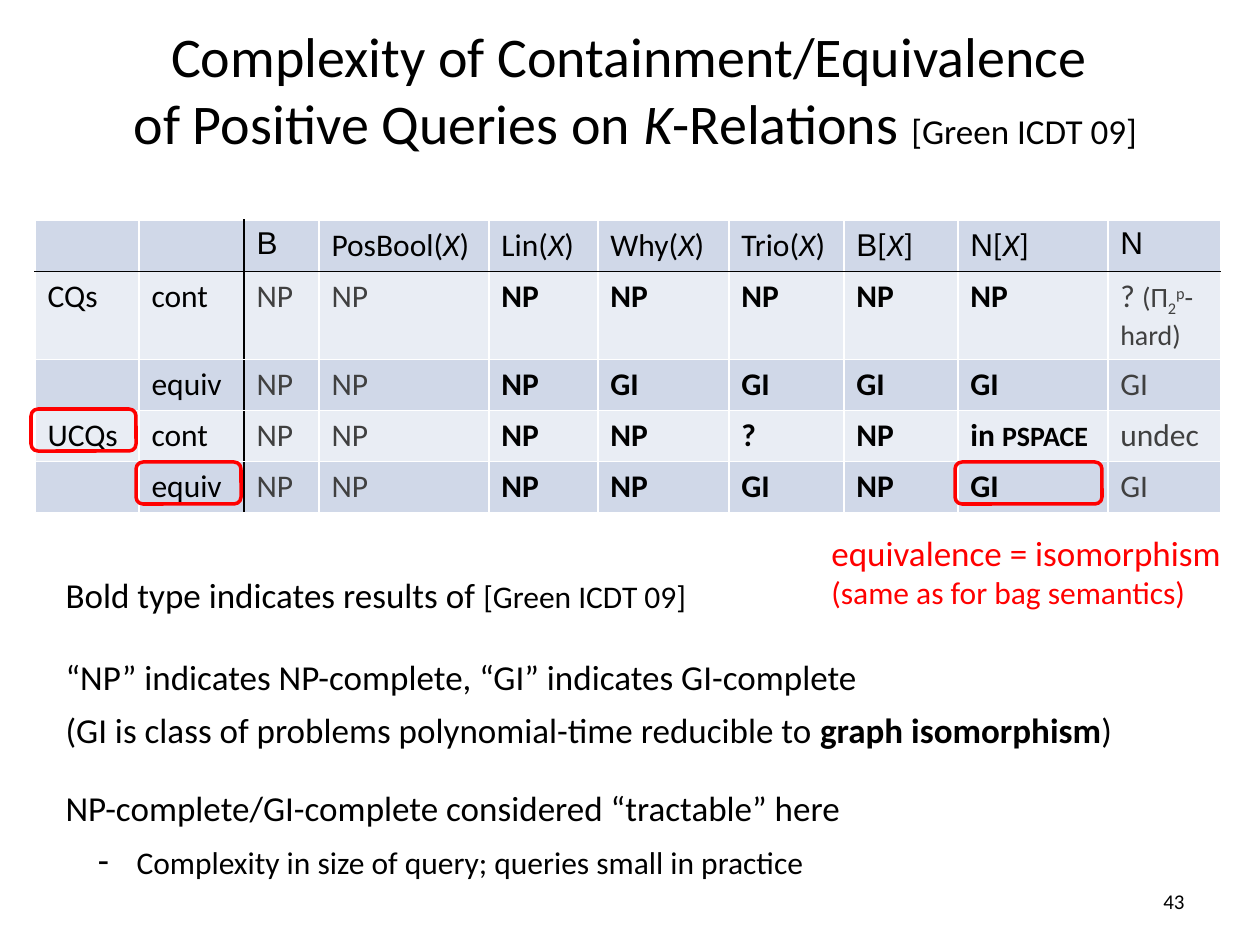
"""Builds the slide on the complexity of containment and equivalence."""
from lxml.etree import SubElement as Sub
from pptx import Presentation
from pptx.dml.color import RGBColor as Rgb
from pptx.enum.shapes import MSO_SHAPE as Shape
from pptx.enum.text import MSO_ANCHOR as Anchor, MSO_AUTO_SIZE as Fit, PP_ALIGN as Align
from pptx.oxml.ns import qn
from pptx.util import Emu, Pt

BLACK, WHITE, RED = Rgb(0, 0, 0), Rgb(255, 255, 255), Rgb(255, 0, 0)
GREY, DARK, LIGHT = Rgb(0x40, 0x40, 0x40), Rgb(0xD0, 0xD8, 0xE8), Rgb(0xE9, 0xED, 0xF4)

ITAL, BOLD, ARIAL = {"italic": True}, {"bold": True}, {"name": "Arial"}
S16, S18, S20 = ({"size": Pt(n)} for n in (16, 18, 20))
SUBS, SUPS = {**S16, "base": -25000}, {**S16, "base": 30000}
CITE = "[Green ICDT 09]"

TITLE = [
    [("Complexity of Containment/Equivalence ", {})],
    [("of Positive Queries on ", {}), ("K", ITAL), ("-Relations ", {}), (CITE, S20)],
]


def func(name):
    return [(name + "(", {}), ("X", ITAL), (")", {})]


def poly(name):
    return [(name, ARIAL), ("[", {}), ("X", ITAL), ("]", {})]


HARD = [("? ", {}), ("(Π", S16), ("2", SUBS), ("p", SUPS), ("- hard)", S16)]
SPACE = [("in ", {}), ("PSPACE", S16)]
ROWS = [
    ["", "", [("B", ARIAL)], func("PosBool"), func("Lin"), func("Why"), func("Trio"),
     poly("B"), poly("N"), [("N", ARIAL)]],
    ["CQs", "cont", "NP", "NP", "NP", "NP", "NP", "NP", "NP", HARD],
    ["", "equiv", "NP", "NP", "NP", "GI", "GI", "GI", "GI", "GI"],
    ["UCQs", "cont", "NP", "NP", "NP", "NP", "?", "NP", SPACE, "undec"],
    ["", "equiv", "NP", "NP", "NP", "NP", "GI", "NP", "GI", "GI"],
]
WIDTHS = [104, 105, 75, 170, 109, 131, 115, 114, 150, 113]
ROW_H = 51
GREY_COLS, BOLD_COLS = (2, 3, 9), range(4, 9)

NOTES = [
    (0, [("Bold type indicates results of ", {}), (CITE, S18)]),
    (17, [("“NP” indicates NP-complete, “GI” indicates GI-complete", {})]),
    (0, [("(GI is class of problems polynomial-time reducible to ", {}),
         ("graph isomorphism", BOLD), (")", {})]),
    (15, [("NP-complete/GI-complete considered “tractable” here", {})]),
    (0, [(" ", {}), ("Complexity in size of query; queries small in practice", S18)]),
]
CLAIM = [[("equivalence = isomorphism", {})], [("(same as for bag semantics)", S18)]]
RINGS = [(955, 462, 147), (136, 462, 105), (31, 409, 105)]
RING_H = 42


def px(n):
    return Emu(round(n * 914400 / 126))


def place(shape, *box):
    for key, n in zip(("left", "top", "width", "height"), box):
        setattr(shape, key, px(n))


def write(para, runs, size, color=BLACK, **base):
    for text, own in runs:
        run = para.add_run()
        run.text = text
        form = {"name": "Calibri", "size": Pt(size), **base, **own}
        shift = form.pop("base", None)
        for key, val in form.items():
            setattr(run.font, key, val)
        run.font.color.rgb = color
        if shift:
            run._r.get_or_add_rPr().set("baseline", str(shift))


def edge(cell, side, color, width):
    line = Sub(cell._tc.get_or_add_tcPr(), qn("a:ln" + side), w=str(Pt(width)))
    Sub(Sub(line, qn("a:solidFill")), qn("a:srgbClr"), val=str(color))


def bullet(para, left, hang, mark=None):
    props = para._p.get_or_add_pPr()
    props.set("marL", str(px(left)))
    props.set("indent", str(px(hang)))
    if mark:
        Sub(props, qn("a:buChar"), char=mark)
    else:
        Sub(props, qn("a:buNone"))


def add_box(slide, *box):
    shape = slide.shapes.add_textbox(*map(px, box))
    shape.text_frame.word_wrap = True
    return shape.text_frame


def add_title(slide):
    shape = slide.shapes.title
    place(shape, 42, 10, 1187, 158)
    frame = shape.text_frame
    frame.auto_size, frame.vertical_anchor = Fit.NONE, Anchor.MIDDLE
    para = frame.paragraphs[0]
    para.alignment = Align.CENTER
    for i, runs in enumerate(TITLE):
        if i:
            para.add_line_break()
        write(para, runs, 32)


def add_grid(slide):
    box = map(px, (35, 220, sum(WIDTHS), ROW_H * len(ROWS)))
    table = slide.shapes.add_table(len(ROWS), len(WIDTHS), *box).table
    table.first_row = table.horz_banding = False
    for col, n in zip(table.columns, WIDTHS):
        col.width = px(n)
    for r, row in enumerate(ROWS):
        table.rows[r].height = px(ROW_H)
        for c, item in enumerate(row):
            cell = table.cell(r, c)
            rules = {"L": c == 2, "R": c == 1, "T": r == 1, "B": r == 0}
            for side, on in rules.items():
                edge(cell, side, *((BLACK, 0.75) if on else (WHITE, 1)))
            cell.fill.solid()
            cell.fill.fore_color.rgb = LIGHT if r % 2 else DARK
            runs = [(item, {})] if isinstance(item, str) else item
            if item:
                color = GREY if r and c in GREY_COLS else BLACK
                write(cell.text_frame.paragraphs[0], runs, 18, color,
                      bold=bool(r and c in BOLD_COLS))


def add_notes(slide):
    shape = slide.placeholders[1]
    place(shape, 53, 567, 1207, 323)
    frame = shape.text_frame
    frame.auto_size, frame.vertical_anchor = Fit.NONE, Anchor.TOP
    for i, (gap, runs) in enumerate(NOTES):
        para = frame.add_paragraph() if i else frame.paragraphs[0]
        para.space_before, para.space_after = Pt(gap), Pt(6)
        if i == len(NOTES) - 1:
            para.level = 1
            bullet(para, 63, -31, "-")
        else:
            bullet(para, 0, 0)
        write(para, runs, 20)


def add_marks(slide):
    for left, top, width in RINGS:
        ring = slide.shapes.add_shape(
            Shape.ROUNDED_RECTANGLE, *map(px, (left, top, width, RING_H)))
        ring.shadow.inherit = False
        ring.fill.background()
        ring.line.color.rgb, ring.line.width = RED, Pt(2)
    frame = add_box(slide, 819, 525, 420, 93)
    for i, runs in enumerate(CLAIM):
        para = frame.add_paragraph() if i else frame.paragraphs[0]
        write(para, runs, 20, RED)


def add_number(slide):
    frame = add_box(slide, 903, 876, 294, 50)
    frame.vertical_anchor = Anchor.MIDDLE
    para = frame.paragraphs[0]
    para.alignment = Align.RIGHT
    write(para, [("43", {})], 12)


def main():
    deck = Presentation()
    deck.slide_width, deck.slide_height = px(1260), px(945)
    slide = deck.slides.add_slide(deck.slide_layouts[1])
    for step in (add_title, add_grid, add_number, add_notes, add_marks):
        step(slide)
    deck.save("out.pptx")


if __name__ == "__main__":
    main()
